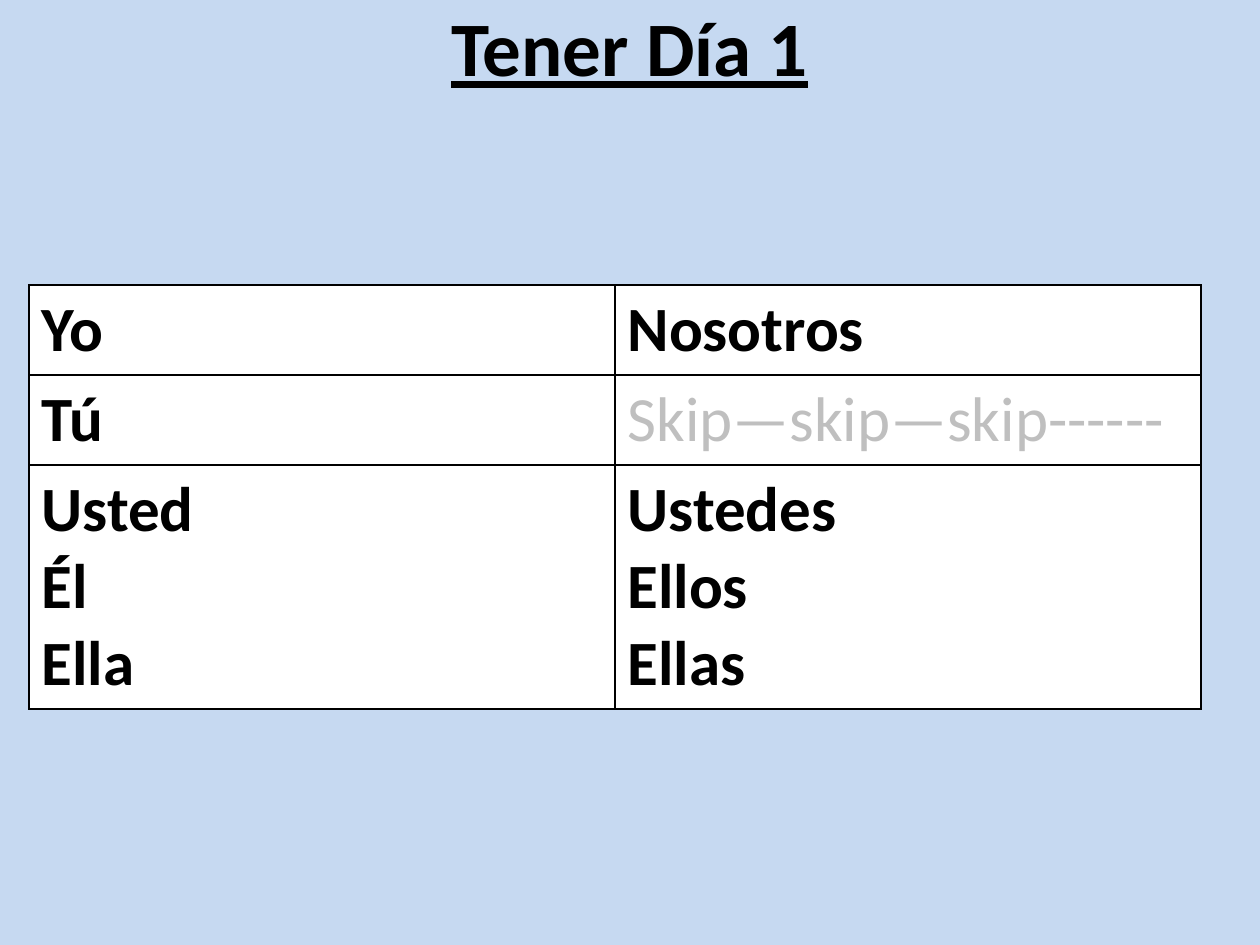
"""Build a slide with a table of Spanish subject pronouns for the verb tener."""
from lxml.etree import SubElement
from pptx import Presentation
from pptx.dml.color import RGBColor
from pptx.enum.text import MSO_ANCHOR as Anchor, PP_ALIGN as Align
from pptx.oxml.ns import qn
from pptx.util import Pt

PX = 914400 // 126
BLACK = RGBColor(0x00, 0x00, 0x00)
WHITE = RGBColor(0xFF, 0xFF, 0xFF)
GREY = RGBColor(0xBF, 0xBF, 0xBF)
SKY = RGBColor(0xC6, 0xD9, 0xF1)
ROWS = [
    (90, "Yo", "Nosotros"),
    (90, "Tú", "Skip—skip—skip------"),
    (244, "Usted\nÉl\nElla", "Ustedes\nEllos\nEllas"),
]


def style(frame, size, color=BLACK, bold=True):
    for para in frame.paragraphs:
        for run in para.runs:
            font = run.font
            font.name, font.size, font.bold = "Calibri", Pt(size), bold
            font.color.rgb = color


def border(cell):
    props = cell._tc.get_or_add_tcPr()
    for spot, side in enumerate(("lnL", "lnR", "lnT", "lnB")):
        line = SubElement(props, qn(f"a:{side}"), w=str(Pt(1)))
        fill = SubElement(line, qn("a:solidFill"))
        SubElement(fill, qn("a:srgbClr"), val=str(BLACK))
        props.insert(spot, line)


deck = Presentation()
deck.slide_width, deck.slide_height = 1260 * PX, 945 * PX
slide = deck.slides.add_slide(deck.slide_layouts[6])
slide.background.fill.solid()
slide.background.fill.fore_color.rgb = SKY

title = slide.shapes.add_textbox(0, -39 * PX, 1260 * PX, 170 * PX).text_frame
title.word_wrap = True
title.vertical_anchor = Anchor.MIDDLE
title.text = "Tener Día 1"
title.paragraphs[0].alignment = Align.CENTER
style(title, 44)
title.paragraphs[0].runs[0].font.underline = True

high = sum(row[0] for row in ROWS)
table = slide.shapes.add_table(3, 2, 29 * PX, 285 * PX, 1172 * PX, high * PX).table
table.first_row = table.horz_banding = False
for r, (tall, *words) in enumerate(ROWS):
    table.rows[r].height = tall * PX
    for c, word in enumerate(words):
        cell = table.cell(r, c)
        cell.fill.solid()
        cell.fill.fore_color.rgb = WHITE
        border(cell)
        cell.text_frame.text = word
        skip = word.startswith("Skip")
        style(cell.text_frame, 36, GREY if skip else BLACK, not skip)

deck.save("out.pptx")
